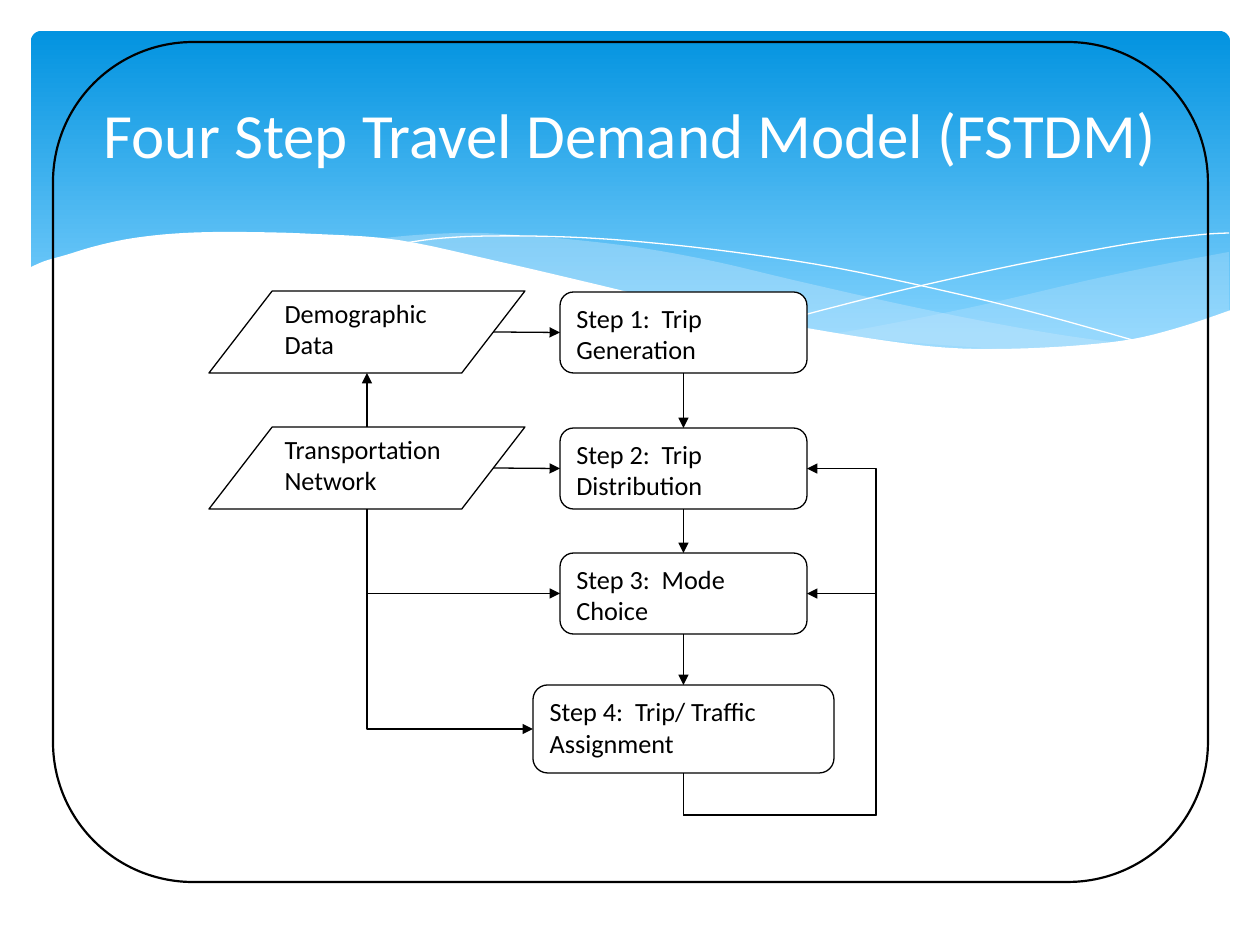
from dataclasses import dataclass

from lxml.etree import SubElement
from pptx import Presentation
from pptx.dml.color import RGBColor
from pptx.enum.shapes import MSO_CONNECTOR as Connector, MSO_SHAPE as Shape
from pptx.enum.text import MSO_ANCHOR as Anchor, PP_ALIGN as Align
from pptx.oxml.ns import qn
from pptx.util import Pt

PX = 914400 / 126
TOP, LEFT, BOTTOM, RIGHT = range(4)


@dataclass(frozen=True)
class Theme:
    font: str = "Calibri"
    title_size: float = 36
    label_size: float = 15
    black: str = "000000"
    white: str = "FFFFFF"
    sky_top: str = "0293E0"
    sky_bottom: str = "83D3FE"
    wave: str = "C6E7FC"
    thin: float = 0.75
    frame: float = 1.25


THEME = Theme()

TITLE = "Four Step Travel Demand Model (FSTDM)"
STEPS = [
    ("Step 1:  Trip Generation", (560, 292, 247, 81)),
    ("Step 2:  Trip Distribution", (560, 428, 247, 81)),
    ("Step 3:  Mode Choice", (560, 553, 247, 81)),
    ("Step 4:  Trip/ Traffic Assignment", (533, 685, 301, 88)),
]
INPUTS = [
    ("Demographic Data", (209, 291, 316, 82)),
    ("Transportation Network", (209, 427, 316, 82)),
]
FEEDBACK_DROP, FEEDBACK_X = 42, 876

# Each wave: its edges as knots of a smooth curve, and its opacity in percent
WAVES = [
    ([[(1229, 252), (1160, 265), (1085, 281), (982, 305), (889, 324), (833, 334)],
      [(833, 334), (906, 342), (969, 347), (1026, 350), (1076, 348), (1120, 343),
       (1160, 334), (1196, 323), (1229, 311)]], 29),
    ([[(1125, 344), (1055, 334), (977, 320), (890, 302), (793, 280), (717, 262),
       (648, 249), (586, 241), (529, 236), (479, 233), (433, 234), (394, 237), (360, 241)],
      [(360, 241), (431, 251), (509, 266), (566, 280), (668, 302), (757, 322),
       (838, 335), (910, 345), (973, 349), (1030, 350), (1080, 349), (1125, 344)]], 40),
]
STRANDS = [
    [(389, 246), (433, 239), (488, 236), (567, 237), (643, 242), (733, 252),
     (837, 268), (958, 294), (1047, 316), (1143, 343)],
    [(772, 324), (823, 310), (907, 289), (1016, 265), (1128, 244), (1198, 235), (1229, 233)],
]
PAPER_EDGE = [(1231, 310), (1184, 326), (1133, 339), (1071, 346), (999, 349), (937, 347),
              (867, 338), (789, 325), (699, 309), (599, 285), (492, 260), (398, 240),
              (315, 234), (243, 232), (184, 233), (134, 238), (96, 246), (66, 255),
              (45, 261), (29, 268)]
PAPER_BASE = [(29, 415), (1231, 415)]

prs = Presentation()
prs.slide_width, prs.slide_height = round(1260 * PX), round(945 * PX)
slide = prs.slides.add_slide(prs.slide_layouts[6])
shapes = slide.shapes


def emu(*lengths):
    return [round(length * PX) for length in lengths]


def color(code):
    return RGBColor.from_string(code)


def paint(shape, fill=None, line=None, width=THEME.thin, opacity=None):
    shape.shadow.inherit = False
    if fill:
        shape.fill.solid()
        shape.fill.fore_color.rgb = color(fill)
    else:
        shape.fill.background()
    if opacity:
        code = shape._element.spPr.find(f"{qn('a:solidFill')}/{qn('a:srgbClr')}")
        SubElement(code, qn("a:alpha"), val=str(opacity * 1000))
    if line:
        shape.line.color.rgb = color(line)
        shape.line.width = Pt(width)
    else:
        shape.line.fill.background()
    return shape


def write(shape, text, size=THEME.label_size, ink=THEME.black, align=Align.LEFT, anchor=Anchor.TOP):
    frame = shape.text_frame
    frame.word_wrap = True
    frame.vertical_anchor = anchor
    paragraph = frame.paragraphs[0]
    paragraph.alignment = align
    run = paragraph.add_run()
    run.text = text
    run.font.name, run.font.size = THEME.font, Pt(size)
    run.font.color.rgb = color(ink)


def smooth(knots, parts=5):
    """Points of a Catmull-Rom curve through the knots."""
    ends = [knots[0], *knots, knots[-1]]
    points = [knots[0]]
    for a, b, c, d in zip(ends, ends[1:], ends[2:], ends[3:]):
        for t in (part / parts for part in range(1, parts + 1)):
            points.append(tuple(
                (2 * q + (r - p) * t + (2 * p - 5 * q + 4 * r - s) * t**2
                 + (3 * q - p - 3 * r + s) * t**3) / 2
                for p, q, r, s in zip(a, b, c, d)))
    return points


def outline(points, close=True):
    start, *rest = [emu(*point) for point in points]
    builder = shapes.build_freeform(*start)
    builder.add_line_segments(rest, close=close)
    return builder.convert_to_shape()


def finish_arrow(arrow):
    arrow.line.color.rgb = color(THEME.black)
    arrow.line.width = Pt(THEME.thin)
    properties = arrow._element.spPr
    SubElement(properties.find(qn("a:ln")), qn("a:tailEnd"), type="triangle")
    SubElement(properties, qn("a:effectLst"))


def straight(start, end):
    return shapes.add_connector(Connector.STRAIGHT, *emu(*start, *end))


def elbow(start, end, bends, *adjusts):
    """Arrow that leaves vertically and arrives sideways; rise and run swap under the quarter turn."""
    (x1, y1), (x2, y2) = start, end
    rise, run = abs(y2 - y1), x2 - x1
    left, top = (x1 + x2 - rise) / 2, (y1 + y2 - run) / 2
    arrow = shapes.add_connector(Connector.ELBOW, *emu(left, top, left + rise, top + run))
    properties = arrow._element.spPr
    transform = properties.find(qn("a:xfrm"))
    transform.set("rot", str(270 * 60000))
    if y2 > y1:
        transform.set("flipH", "1")
    geometry = properties.find(qn("a:prstGeom"))
    geometry.set("prst", f"bentConnector{bends}")
    for number, value in enumerate(adjusts, 1):
        SubElement(geometry.find(qn("a:avLst")), qn("a:gd"),
                   name=f"adj{number}", fmla=f"val {round(value * 100000)}")
    finish_arrow(arrow)


def side(box, which):
    x, y, w, h = box
    return {TOP: (x + w / 2, y), LEFT: (x, y + h / 2),
            BOTTOM: (x + w / 2, y + h), RIGHT: (x + w, y + h / 2)}[which]


def add_box(kind, text, box):
    shape = paint(shapes.add_shape(kind, *emu(*box)), THEME.white, THEME.black)
    write(shape, text)
    return shape


# Backdrop
sky = paint(shapes.add_shape(Shape.ROUNDED_RECTANGLE, *emu(31, 31, 1199, 340)))
sky.adjustments[0] = 0.03
sky.fill.gradient()
sky.fill.gradient_angle = 270
for stop, code, position in zip(sky.fill.gradient_stops, (THEME.sky_top, THEME.sky_bottom), (0, 0.9)):
    stop.color.rgb, stop.position = color(code), position
for edges, opacity in WAVES:
    paint(outline([point for edge in edges for point in smooth(edge)]), THEME.wave, opacity=opacity)
for strand in STRANDS:
    paint(outline(smooth(strand), close=False), line=THEME.white, width=0)
paint(outline(smooth(PAPER_EDGE) + PAPER_BASE), THEME.white)
paint(shapes.add_shape(Shape.ROUNDED_RECTANGLE, *emu(53, 42, 1155, 840)),
      line=THEME.black, width=THEME.frame)
write(shapes.add_textbox(*emu(63, 47, 1134, 173)), TITLE, size=THEME.title_size,
      ink=THEME.white, align=Align.CENTER, anchor=Anchor.MIDDLE)

# Flow chart
steps = [add_box(Shape.FLOWCHART_ALTERNATE_PROCESS, *step) for step in STEPS]
for text, box in INPUTS:
    add_box(Shape.FLOWCHART_DATA, text, box)
step_boxes = [box for _, box in STEPS]
demographic, network = [box for _, box in INPUTS]

for (upper, lower), (above, below) in zip(zip(steps, steps[1:]), zip(step_boxes, step_boxes[1:])):
    arrow = straight(side(above, BOTTOM), side(below, TOP))
    arrow.begin_connect(upper, BOTTOM)
    arrow.end_connect(lower, TOP)
    finish_arrow(arrow)
for (x, y, w, h), step, box in zip((demographic, network), steps, step_boxes):
    arrow = straight((x + w * 0.9, y + h / 2), side(box, LEFT))
    arrow.end_connect(step, LEFT)
    finish_arrow(arrow)
finish_arrow(straight(side(network, TOP), side(demographic, BOTTOM)))

for box in step_boxes[2:]:
    elbow(side(network, BOTTOM), side(box, LEFT), 2)
source = side(step_boxes[3], BOTTOM)
for box in step_boxes[1:3]:
    target = side(box, RIGHT)
    elbow(source, target, 4, -FEEDBACK_DROP / (source[1] - target[1]),
          (FEEDBACK_X - source[0]) / (target[0] - source[0]))

prs.save("out.pptx")
